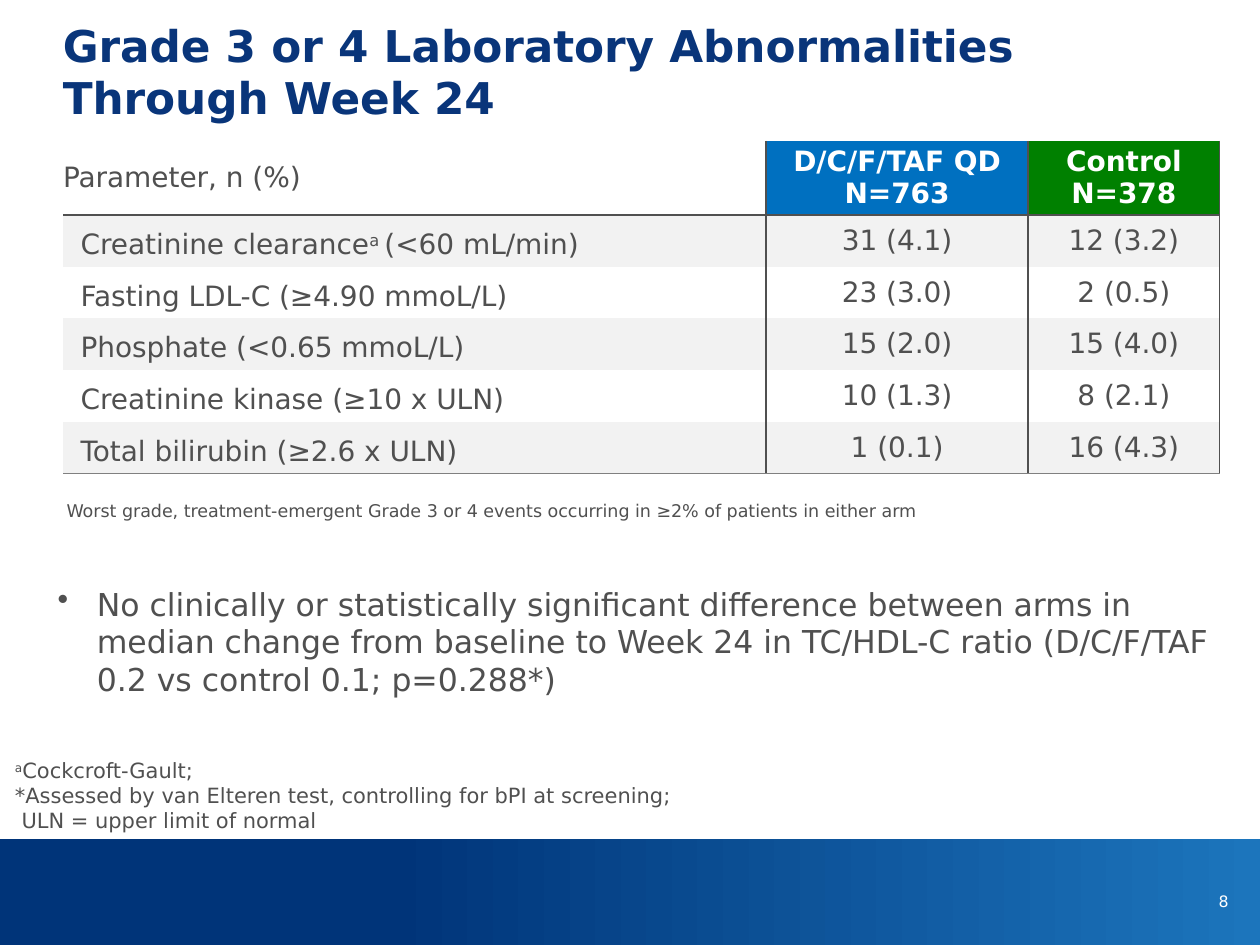
from pptx import Presentation
from pptx.dml.color import RGBColor as RGB
from pptx.enum.shapes import MSO_SHAPE as Shape
from pptx.enum.text import MSO_ANCHOR as Anchor, PP_ALIGN as Align
from pptx.oxml.ns import qn
from pptx.util import Inches, Pt
from lxml.etree import SubElement as Sub

NAVY = RGB(0x09, 0x35, 0x7A)
DEEP = RGB(0x00, 0x34, 0x79)
SKY = RGB(0x1C, 0x75, 0xBC)
BLUE = RGB(0x00, 0x70, 0xC0)
GREEN = RGB(0x00, 0x80, 0x00)
GREY = RGB(0x50, 0x50, 0x50)
MID = RGB(0x80, 0x80, 0x80)
PALE = RGB(0xF2, 0xF2, 0xF2)
WHITE = RGB(0xFF, 0xFF, 0xFF)
FONT = "DejaVu Sans"
WIDE, HIGH = Inches(10), Inches(7.5)
COLS = (5.58, 2.08, 1.52)
HEAD, ROW = 0.59, 0.41

HEADS = ("Parameter, n (%)", "D/C/F/TAF QD\nN=763", "Control\nN=378")
FILLS = (None, BLUE, GREEN)
ROWS = (
    ("Creatinine clearance^a ^(<60 mL/min)", "31 (4.1)", "12 (3.2)"),
    ("Fasting LDL-C (≥4.90 mmoL/L)", "23 (3.0)", "2 (0.5)"),
    ("Phosphate (<0.65 mmoL/L)", "15 (2.0)", "15 (4.0)"),
    ("Creatinine kinase (≥10 x ULN)", "10 (1.3)", "8 (2.1)"),
    ("Total bilirubin (≥2.6 x ULN)", "1 (0.1)", "16 (4.3)"),
)
TITLE = "Grade 3 or 4 Laboratory Abnormalities Through Week 24"
NOTE = ("Worst grade, treatment-emergent Grade 3 or 4 events "
        "occurring in ≥2% of patients in either arm")
POINT = ("No clinically or statistically significant difference between arms "
         "in median change from baseline to Week 24 in TC/HDL-C ratio "
         "(D/C/F/TAF 0.2 vs control 0.1; p=0.288*)")
FOOT = ("^a^Cockcroft-Gault;\n"
        "*Assessed by van Elteren test, controlling for bPI at screening;\n"
        " ULN = upper limit of normal")


def place(x, y, w, h):
    return int(WIDE * x), int(HIGH * y), int(WIDE * w), int(HIGH * h)


def write(frame, text, size=16, color=GREY, bold=False, align=Align.LEFT,
          space=None, bullet=None):
    frame.word_wrap = True
    for n, line in enumerate(text.split("\n")):
        par = frame.paragraphs[0] if n == 0 else frame.add_paragraph()
        par.alignment = align
        if space:
            par.line_spacing = space
        if bullet:
            props = par._p.get_or_add_pPr()
            props.set("marL", str(Inches(0.31)))
            props.set("indent", str(Inches(-0.31)))
            Sub(props, qn("a:buChar")).set("char", bullet)
        for k, part in enumerate(line.split("^")):
            if not part:
                continue
            run = par.add_run()
            run.text = part
            font = run.font
            font.name, font.size, font.bold = FONT, Pt(size), bold
            font.color.rgb = color
            if k % 2:
                run._r.get_or_add_rPr().set("baseline", "30000")


def label(slide, spot, text, anchor=Anchor.TOP, **style):
    frame = slide.shapes.add_textbox(*place(*spot)).text_frame
    frame.vertical_anchor = anchor
    write(frame, text, **style)


def band(slide):
    bar = slide.shapes.add_shape(Shape.RECTANGLE, *place(0, 0.888, 1, 0.112))
    bar.shadow.inherit = False
    bar.line.fill.background()
    bar.fill.gradient()
    bar.fill.gradient_angle = 0
    for stop, color, spot in zip(bar.fill.gradient_stops, (DEEP, SKY), (0.31, 1)):
        stop.color.rgb = color
        stop.position = spot


def edge(cell, **sides):
    props = cell._tc.get_or_add_tcPr()
    for side in "LRTB":
        color = sides.get(side)
        line = Sub(props, qn(f"a:ln{side}"))
        line.set("w", str(Pt(1) if color else 0))
        if color:
            fill = Sub(line, qn("a:solidFill"))
            Sub(fill, qn("a:srgbClr")).set("val", str(color))
        else:
            Sub(line, qn("a:noFill"))


def paint(cell, color):
    if color:
        cell.fill.solid()
        cell.fill.fore_color.rgb = color
    else:
        cell.fill.background()


def grid(slide):
    spot = place(0.05, 0.149, 0.918, 0.352)
    table = slide.shapes.add_table(len(ROWS) + 1, len(COLS), *spot).table
    table.first_row = table.horz_banding = False
    for col, width in zip(table.columns, COLS):
        col.width = Inches(width)
    for r, texts in enumerate((HEADS,) + ROWS):
        table.rows[r].height = Inches(ROW if r else HEAD)
        for c, text in enumerate(texts):
            cell = table.cell(r, c)
            cell.vertical_anchor = Anchor.MIDDLE
            cell.margin_top = cell.margin_bottom = cell.margin_right = 0
            cell.margin_left = Inches(0.14 if r and not c else 0)
            base = {0: GREY, len(ROWS): MID}.get(r)
            edge(cell, L=GREY if c else None, R=GREY,
                 T=GREY if r == 1 else None, B=base)
            paint(cell, (PALE if r % 2 else None) if r else FILLS[c])
            top = r == 0 and c > 0
            write(cell.text_frame, text, color=WHITE if top else GREY, bold=top,
                  align=Align.CENTER if c else Align.LEFT,
                  space=1.25 if r and not c else None)


def main():
    deck = Presentation()
    deck.slide_width, deck.slide_height = WIDE, HIGH
    slide = deck.slides.add_slide(deck.slide_layouts[6])
    band(slide)
    label(slide, (0.04, 0.003, 0.901, 0.144), TITLE, Anchor.MIDDLE,
          size=25, color=NAVY, bold=True)
    grid(slide)
    label(slide, (0.043, 0.523, 0.877, 0.036), NOTE, size=10)
    label(slide, (0.036, 0.612, 0.945, 0.135), POINT, size=18, bullet="•")
    label(slide, (0.002, 0.795, 0.66, 0.095), FOOT, size=12)
    label(slide, (0.935, 0.927, 0.05, 0.053), "8", Anchor.MIDDLE,
          size=9, color=WHITE, align=Align.RIGHT)
    deck.save("out.pptx")


if __name__ == "__main__":
    main()
